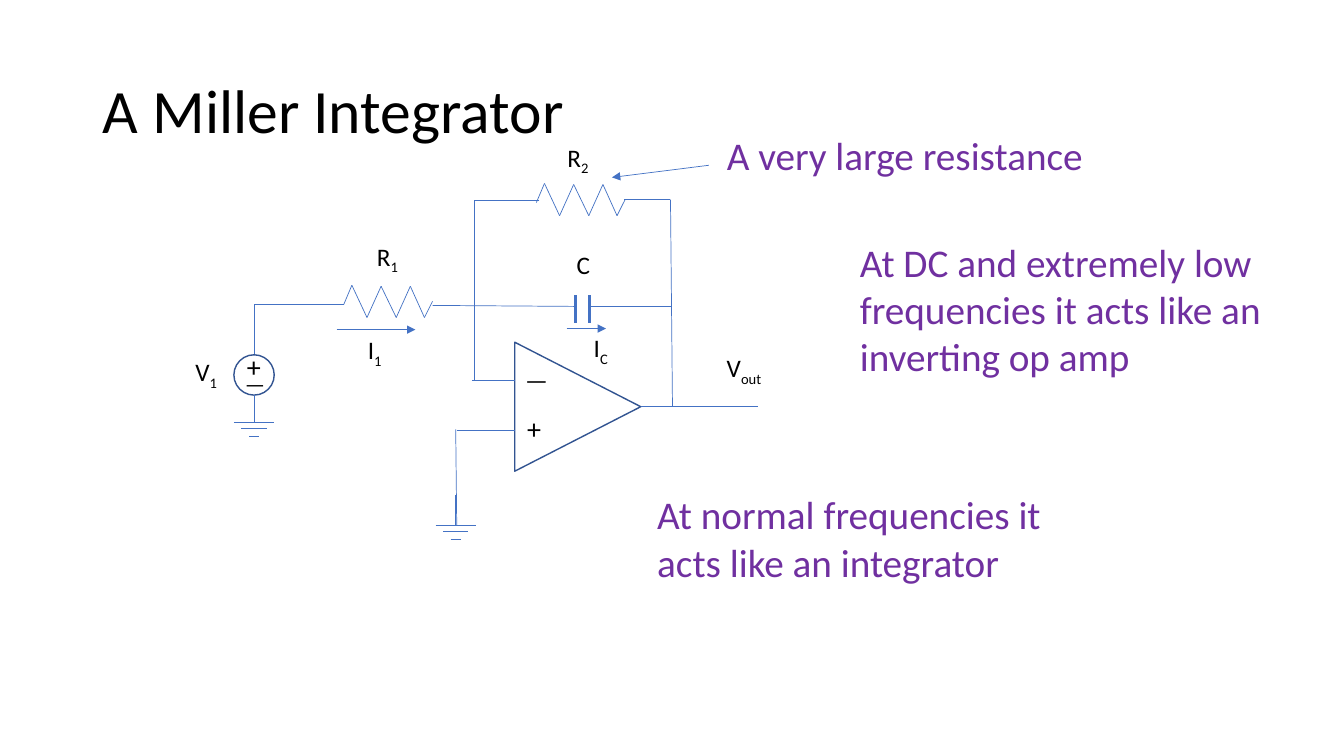
"""Build a slide with the circuit of a Miller integrator."""
from itertools import pairwise

from lxml import etree
from pptx import Presentation
from pptx.dml import color
from pptx.enum import shapes, text
from pptx.oxml import ns
from pptx.util import Inches, Pt

FONT = "Calibri"
COLORS = {"ink": "000000", "wire": "4472C4", "outline": "325491", "note": "7030A0"}

ZIGZAG = [(0, 0), (0.08, -0.19), (0.23, 0.13), (0.37, -0.18),
          (0.52, 0.13), (0.66, -0.18), (0.8, 0.13), (0.88, -0.03)]
GROUND_BARS = [(0.2, 0), (0.125, 0.06), (0.05, 0.14)]

RESISTORS = [(3.41, 3.02), (5.32, 2.01)]
GROUNDS = [(2.52, 4.19, 0.27), (4.52, 5.21, 0.3)]
WIRES = [
    ((4.68, 3.77), (5.11, 3.77)),
    ((4.53, 4.27), (5.11, 4.27)),
    ((6.36, 4.03), (7.52, 4.03)),
    ((4.53, 5.21), (4.52, 4.26)),
    ((4.29, 3.03), (5.71, 3.04)),
    ((4.7, 3.77), (4.7, 1.99)),
    ((3.41, 3.02), (2.52, 3.02)),
    ((2.52, 3.51), (2.52, 3.02)),
    ((6.67, 4.03), (6.65, 1.98)),
    ((6.66, 3.04), (5.85, 3.04)),
    ((5.35, 1.99), (4.7, 1.99)),
    ((6.65, 1.98), (6.19, 1.98)),
]
ARROWS = [
    ((3.34, 3.27), (4.12, 3.27)),
    ((5.62, 3.26), (6.01, 3.26)),
    ((7.03, 1.64), (6.07, 1.76)),
]
LABELS = [
    ("V", "out", 7.11, 3.45),
    ("C", "", 5.62, 2.42),
    ("R", "1", 3.64, 2.34),
    ("R", "2", 5.53, 1.36),
    ("V", "1", 1.84, 3.49),
    ("I", "1", 3.55, 3.27),
    ("I", "C", 5.79, 3.25),
]
SIGNS = [
    ("—", 5.11, 3.57, 0.4, 18),
    ("+", 5.13, 4.03, 0.44, 20),
    ("+", 2.35, 3.42, 0.44, 20),
    ("—", 2.33, 3.62, 0.37, 16),
]
NOTES = [
    ("A very large resistance", 7.11, 1.25, 4.11, 0.57),
    ("At DC and extremely low frequencies it acts like an inverting op amp",
     8.43, 2.31, 4.42, 1.51),
    ("At normal frequencies it acts like an integrator", 6.42, 4.82, 4.42, 1.04),
]


def rgb(name):
    """Return the named colour."""
    return color.RGBColor.from_string(COLORS[name])


def style_font(font, size, name):
    """Set typeface, size and colour."""
    font.name = FONT
    font.size = Pt(size)
    font.color.rgb = rgb(name)


def add_title(slide, title):
    """Fill and place the title placeholder."""
    shape = slide.shapes.title
    shape.left, shape.top = Inches(0.92), Inches(0.4)
    shape.width, shape.height = Inches(11.5), Inches(1.45)
    frame = shape.text_frame
    frame.text = title
    frame.vertical_anchor = text.MSO_ANCHOR.MIDDLE
    paragraph = frame.paragraphs[0]
    paragraph.alignment = text.PP_ALIGN.LEFT
    paragraph.line_spacing = 0.9
    style_font(paragraph.font, 44, "ink")


def add_text(slide, words, left, top, width, height, size, name="ink"):
    """Add a wrapping text box and return its paragraph."""
    box = slide.shapes.add_textbox(*map(Inches, (left, top, width, height)))
    box.text_frame.word_wrap = True
    paragraph = box.text_frame.paragraphs[0]
    paragraph.add_run().text = words
    style_font(paragraph.font, size, name)
    return paragraph


def add_label(slide, symbol, subscript, left, top):
    """Add a circuit symbol with an optional subscript."""
    paragraph = add_text(slide, symbol, left, top, 0.57, 0.4, 18)
    if subscript:
        run = paragraph.add_run()
        run.text = subscript
        run.font._element.set("baseline", "-25000")


def add_wire(slide, start, end, width=0.5):
    """Add a straight line between two points."""
    line = slide.shapes.add_connector(
        shapes.MSO_CONNECTOR.STRAIGHT, *map(Inches, (*start, *end)))
    line.line.color.rgb = rgb("wire")
    line.line.width = Pt(width)
    etree.SubElement(line._element.spPr, ns.qn("a:effectLst"))
    return line


def add_arrow(slide, start, end):
    """Add a line with an arrowhead at its end."""
    outline = add_wire(slide, start, end).line._get_or_add_ln()
    etree.SubElement(outline, ns.qn("a:tailEnd"), type="triangle")


def add_resistor(slide, left, top):
    """Add a zigzag that starts at the given point."""
    corners = [(left + dx, top + dy) for dx, dy in ZIGZAG]
    for start, end in pairwise(corners):
        add_wire(slide, start, end)


def add_ground(slide, center, top, stem):
    """Add a ground symbol below a short stem."""
    add_wire(slide, (center, top), (center, top - stem))
    for half, drop in GROUND_BARS:
        add_wire(slide, (center - half, top + drop), (center + half, top + drop))


def add_capacitor(slide):
    """Add the two capacitor plates."""
    for x in (5.71, 5.85):
        add_wire(slide, (x, 3.2), (x, 2.93), 2)


def add_outline(slide, kind, left, top, width, height, rotation=0):
    """Add an unfilled component outline."""
    shape = slide.shapes.add_shape(kind, *map(Inches, (left, top, width, height)))
    shape.rotation = rotation
    shape.shadow.inherit = False
    shape.fill.background()
    shape.line.color.rgb = rgb("outline")
    shape.line.width = Pt(1)


def main():
    """Build and save the slide."""
    presentation = Presentation()
    presentation.slide_width, presentation.slide_height = Inches(13.33), Inches(7.5)
    slide = presentation.slides.add_slide(presentation.slide_layouts[5])
    add_title(slide, "A Miller Integrator")
    add_outline(slide, shapes.MSO_SHAPE.ISOSCELES_TRIANGLE, 5.09, 3.41, 1.28, 1.25, 90)
    add_outline(slide, shapes.MSO_SHAPE.OVAL, 2.32, 3.52, 0.4, 0.4)
    for start, end in WIRES:
        add_wire(slide, start, end)
    for resistor in RESISTORS:
        add_resistor(slide, *resistor)
    for ground in GROUNDS:
        add_ground(slide, *ground)
    add_capacitor(slide)
    for start, end in ARROWS:
        add_arrow(slide, start, end)
    for label in LABELS:
        add_label(slide, *label)
    for sign, left, top, height, size in SIGNS:
        add_text(slide, sign, left, top, 0.34, height, size)
    for note in NOTES:
        add_text(slide, *note, 28, "note")
    presentation.save("out.pptx")


if __name__ == "__main__":
    main()
